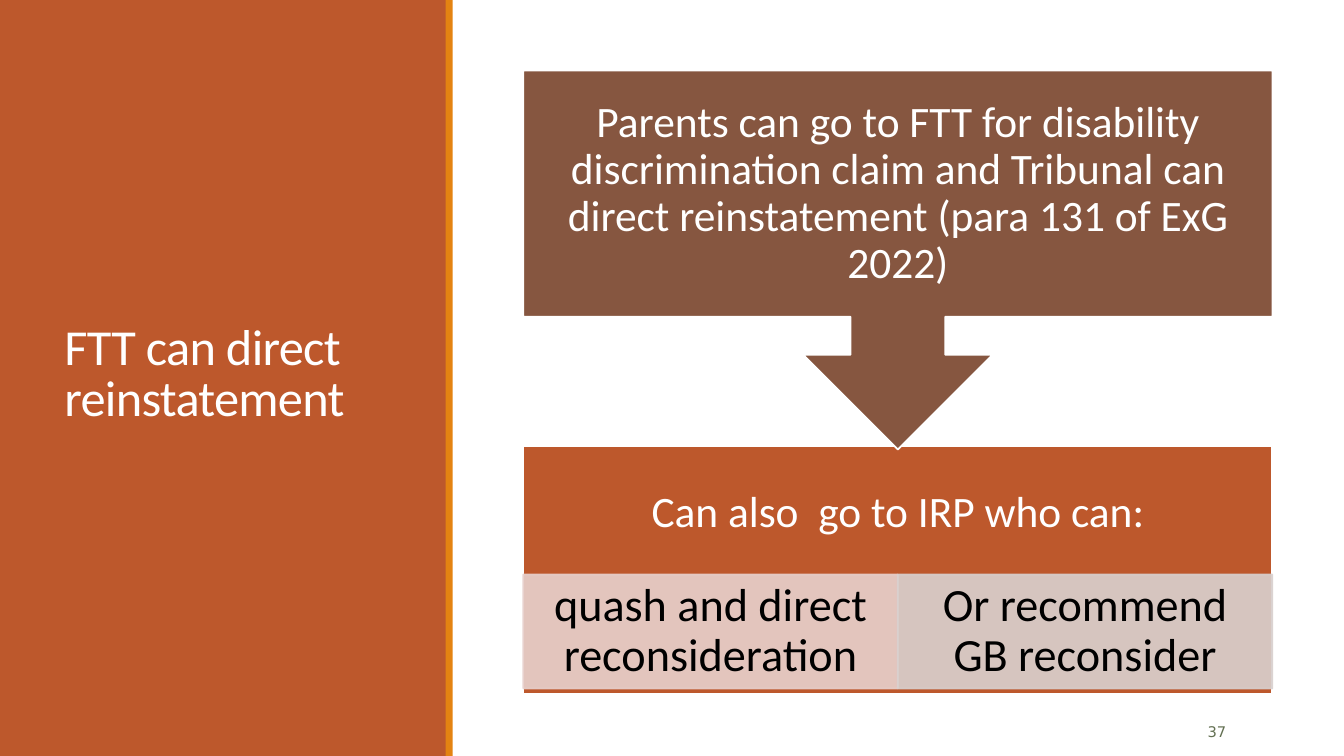
import pptx
import pptx.dml.color
import pptx.enum.shapes
import pptx.enum.text
import pptx.oxml
import pptx.oxml.ns
import pptx.util
from pptx.util import Inches

RGBColor = pptx.dml.color.RGBColor
Shape = pptx.enum.shapes.MSO_SHAPE
Align = pptx.enum.text.PP_ALIGN
Anchor = pptx.enum.text.MSO_ANCHOR

RUST = RGBColor(0xBD, 0x58, 0x2C)
ORANGE = RGBColor(0xE4, 0x83, 0x12)
BROWN = RGBColor(0x86, 0x56, 0x40)
PINK = RGBColor(0xE8, 0xD1, 0xCD)
TAUPE = RGBColor(0xD9, 0xD1, 0xCF)
OLIVE = RGBColor(0x63, 0x70, 0x52)
WHITE = RGBColor(0xFF, 0xFF, 0xFF)
BLACK = RGBColor(0x00, 0x00, 0x00)


def add_block(page, kind, box, fill, line=None, opacity=100):
    """Add a filled shape, outlined and see-through if asked."""
    block = page.shapes.add_shape(kind, *map(Inches, box))
    block.shadow.inherit = False
    block.fill.solid()
    block.fill.fore_color.rgb = fill
    if line is None:
        block.line.fill.background()
    else:
        block.line.color.rgb = line
        block.line.width = pptx.util.Pt(1.25)
    if opacity < 100:
        for color in block._element.spPr.iter(pptx.oxml.ns.qn("a:srgbClr")):
            alpha = color.makeelement(pptx.oxml.ns.qn("a:alpha"), {"val": str(opacity * 1000)})
            color.append(alpha)
    return block


def write(shape, text, size, color, align=Align.CENTER, spacing=0.9,
          insets=(0.1, 0.05, 0.1, 0.05), font="Calibri"):
    """Fill a shape with one vertically centred paragraph and return its run."""
    frame = shape.text_frame
    frame.word_wrap = True
    frame.vertical_anchor = Anchor.MIDDLE
    (frame.margin_left, frame.margin_top,
     frame.margin_right, frame.margin_bottom) = map(Inches, insets)
    frame.text = text
    para = frame.paragraphs[0]
    para.alignment = align
    para.line_spacing = spacing
    span = para.runs[0]
    span.font.name = font
    span.font.size = pptx.util.Pt(size)
    span.font.color.rgb = color
    return span


def add_title_panel(page, left, top, width, height, title):
    """Draw the coloured side panel with its title and edge stripe."""
    add_block(page, Shape.RECTANGLE, (left, top, width, height), RUST)
    title_box = page.shapes.add_textbox(
        Inches(left + 0.54), Inches(top + 0.57), Inches(3.37), Inches(6.31))
    span = write(title_box, title, 36, WHITE, Align.LEFT, 0.85)
    span._r.get_or_add_rPr().set("spc", "-50")
    add_block(page, Shape.RECTANGLE, (left + width - 0.01, top, 0.07, height), ORANGE)


def add_options(page, left, top, width, height, heading, options):
    """Draw the lower block: a heading above equal option cells."""
    heading_height, cell_top, cell_height = 1.32, 1.27, 1.13
    block = add_block(page, Shape.RECTANGLE, (left, top, width, height), RUST, WHITE)
    below_heading = height - heading_height
    write(block, heading, 31, WHITE, insets=(0.24, 0.24, 0.24, 0.24 + below_heading))
    cell_width = width / len(options)
    for index, (text, fill) in enumerate(options):
        box = (left + index * cell_width, top + cell_top, cell_width, cell_height)
        cell = add_block(page, Shape.RECTANGLE, box, fill, fill, 90)
        write(cell, text, 33, BLACK, insets=(0.26, 0.05, 0.26, 0.05))


def add_claim(page, left, top, width, height, text):
    """Draw the upper block, whose arrow points to the options."""
    box = (left, top, width, height)
    callout = add_block(page, Shape.DOWN_ARROW_CALLOUT, box, BROWN, WHITE)
    write(callout, text, 31, WHITE, insets=(0.24,) * 4)


def add_page_number(page, left, top, width, height, number):
    """Write the page number at the foot of the slide."""
    box = page.shapes.add_textbox(*map(Inches, (left, top, width, height)))
    write(box, number, 10.5, OLIVE, Align.RIGHT, 1.0, font="DejaVu Sans")


def main():
    """Build the slide and save the deck."""
    deck = pptx.Presentation()
    deck.slide_width, deck.slide_height = Inches(13.33), Inches(7.5)
    page = deck.slides.add_slide(deck.slide_layouts[6])
    add_title_panel(page, 0, 0, 4.43, 7.5, "FTT can direct reinstatement")
    add_page_number(page, 11.07, 7.06, 1.19, 0.4, "37")
    add_options(page, 5.19, 4.43, 7.43, 2.45, "Can also  go to IRP who can:", [
        ("quash and direct reconsideration", PINK),
        ("Or recommend GB reconsider", TAUPE),
    ])
    add_claim(page, 5.19, 0.7, 7.43, 3.76,
              "Parents can go to FTT for disability discrimination claim and "
              "Tribunal can direct reinstatement (para 131 of ExG 2022)")
    deck.save("out.pptx")


if __name__ == "__main__":
    main()
